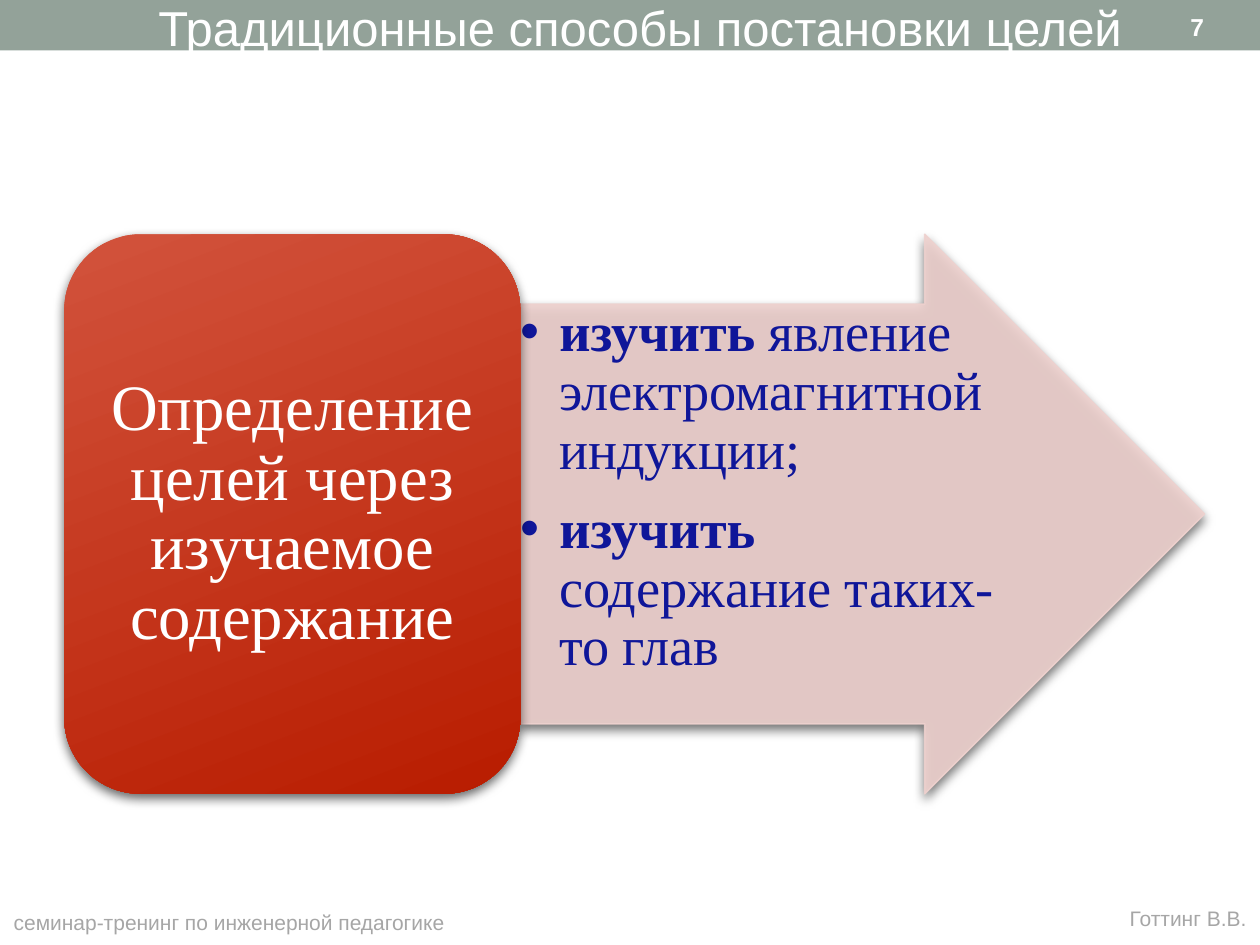
from lxml.etree import SubElement
from pptx import Presentation
from pptx.dml.color import RGBColor
from pptx.enum.shapes import MSO_SHAPE
from pptx.enum.text import MSO_ANCHOR, PP_ALIGN
from pptx.oxml.ns import qn
from pptx.util import Inches, Pt

COLORS = {
    "band": "93A299",
    "arrow": "EED1CE",
    "red_light": "D2533C",
    "red_dark": "B81C00",
    "blue": "0F1699",
    "white": "FFFFFF",
    "grey": "A6A6A6",
    "shadow": "000000",
}
GOALS = [
    ("изучить", " явление электромагнитной индукции;"),
    ("изучить", " содержание таких-то глав"),
]


def rgb(name):
    return RGBColor.from_string(COLORS[name])


def set_alpha(fill_xml, percent):
    color = fill_xml.find(".//" + qn("a:srgbClr"))
    SubElement(color, qn("a:alpha"), val=str(percent * 1000))


def add_shadow(sp):
    effects = sp._element.spPr.find(qn("a:effectLst"))
    outer = SubElement(effects, qn("a:outerShdw"), blurRad=str(Pt(6)),
                       dist=str(Pt(3)), dir="5400000", rotWithShape="0")
    color = SubElement(outer, qn("a:srgbClr"), val=COLORS["shadow"])
    SubElement(color, qn("a:alpha"), val="60000")


def add_bullet(p, indent):
    pPr = p._p.get_or_add_pPr()
    pPr.set("marL", str(indent))
    pPr.set("indent", str(-indent))
    SubElement(pPr, qn("a:buFont"), typeface="Arial")
    SubElement(pPr, qn("a:buChar"), char="•")


def add_plain_shape(shapes, kind, box):
    sp = shapes.add_shape(kind, *map(Inches, box))
    sp.shadow.inherit = False
    sp.line.fill.background()
    return sp


def set_frame(tf, side, top, anchor=MSO_ANCHOR.MIDDLE):
    tf.word_wrap = True
    tf.vertical_anchor = anchor
    tf.margin_left = tf.margin_right = Inches(side)
    tf.margin_top = tf.margin_bottom = Inches(top)


def format_run(r, size, color, font="Arial", bold=False):
    r.font.size, r.font.name, r.font.bold = Pt(size), font, bold
    r.font.color.rgb = rgb(color)


def add_label(s, text, box, size, color, align=PP_ALIGN.CENTER, bold=False):
    tf = s.shapes.add_textbox(*map(Inches, box)).text_frame
    set_frame(tf, 0.1, 0.05)
    tf.text = text
    p = tf.paragraphs[0]
    p.alignment = align
    format_run(p.runs[0], size, color, bold=bold)
    return tf


def add_arrow(shapes):
    sp = add_plain_shape(shapes, MSO_SHAPE.RIGHT_ARROW, (4.13, 1.86, 5.43, 4.44))
    sp.adjustments[0], sp.adjustments[1] = 0.75, 0.5
    sp.fill.solid()
    sp.fill.fore_color.rgb = rgb("arrow")
    sp.line.color.rgb = rgb("arrow")
    sp.line.width = Pt(1)
    spPr = sp._element.spPr
    for tag in ("a:solidFill", "a:ln"):
        set_alpha(spPr.find(qn(tag)), 90)
    add_shadow(sp)


def add_goals(shapes):
    box = (4.13, 2.42, 3.77, 3.33)
    tf = shapes.add_textbox(*map(Inches, box)).text_frame
    set_frame(tf, 0, 0, MSO_ANCHOR.TOP)
    for i, (verb, content) in enumerate(GOALS):
        p = tf.add_paragraph() if i else tf.paragraphs[0]
        p.alignment = PP_ALIGN.LEFT
        p.line_spacing = 0.9
        p.space_after = Pt(12)
        add_bullet(p, Inches(0.31))
        for text, bold in ((verb, True), (content, False)):
            r = p.add_run()
            r.text = text
            format_run(r, 31, "blue", "Times New Roman", bold)


def add_method_block(shapes):
    sp = add_plain_shape(shapes, MSO_SHAPE.ROUNDED_RECTANGLE, (0.51, 1.86, 3.62, 4.44))
    sp.fill.gradient()
    sp.fill.gradient_angle = 291
    for stop, position, color in zip(sp.fill.gradient_stops, (0, 1),
                                     ("red_light", "red_dark")):
        stop.position = position
        stop.color.rgb = rgb(color)
    add_shadow(sp)

    tf = sp.text_frame
    set_frame(tf, 0.15, 0.08)
    tf.text = "Определение целей через изучаемое содержание"
    p = tf.paragraphs[0]
    p.alignment = PP_ALIGN.CENTER
    p.line_spacing = 0.9
    format_run(p.runs[0], 37, "white", "Times New Roman")


def main():
    prs = Presentation()
    prs.slide_width, prs.slide_height = Inches(10), Inches(7.5)
    s = prs.slides.add_slide(prs.slide_layouts[6])

    # Header band and title
    band = add_plain_shape(s.shapes, MSO_SHAPE.RECTANGLE, (0, 0, 10, 0.4))
    band.fill.solid()
    band.fill.fore_color.rgb = rgb("band")
    add_label(s, "Традиционные способы постановки целей",
              (0.59, -0.26, 8.98, 0.94), 28, "white")

    # Diagram: method and the goals it leads to
    diagram = s.shapes.add_group_shape()
    add_arrow(diagram.shapes)
    add_goals(diagram.shapes)
    add_method_block(diagram.shapes)

    # Page number and footer
    add_label(s, "7", (9.35, 0.03, 1.17, 0.36), 14, "white", PP_ALIGN.LEFT, True)
    add_label(s, "семинар-тренинг по инженерной педагогике",
              (-0.43, 7.14, 4.5, 0.36), 12, "grey")
    author = add_label(s, "Готтинг В.В.", (8.86, 7.13, 1.14, 0.32), 12, "grey")
    author.margin_left = author.margin_right = 0

    prs.save("out.pptx")


if __name__ == "__main__":
    main()
